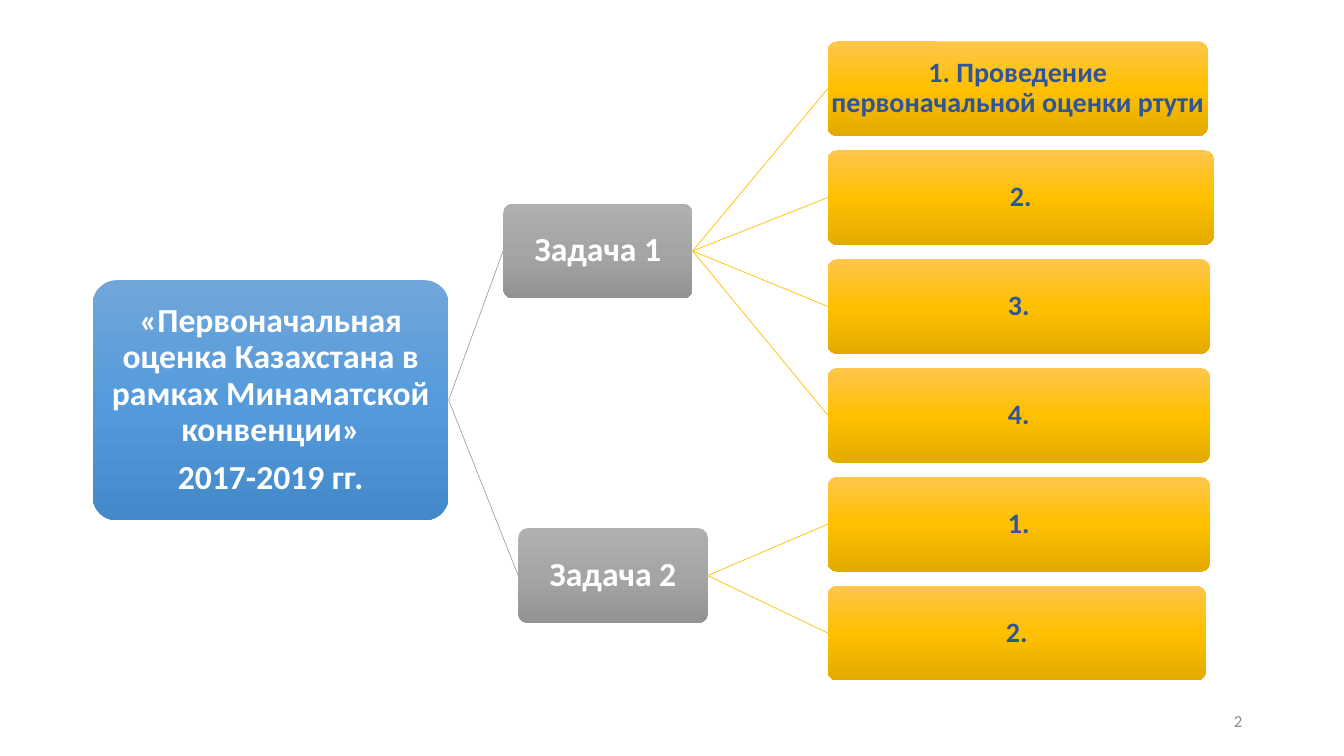
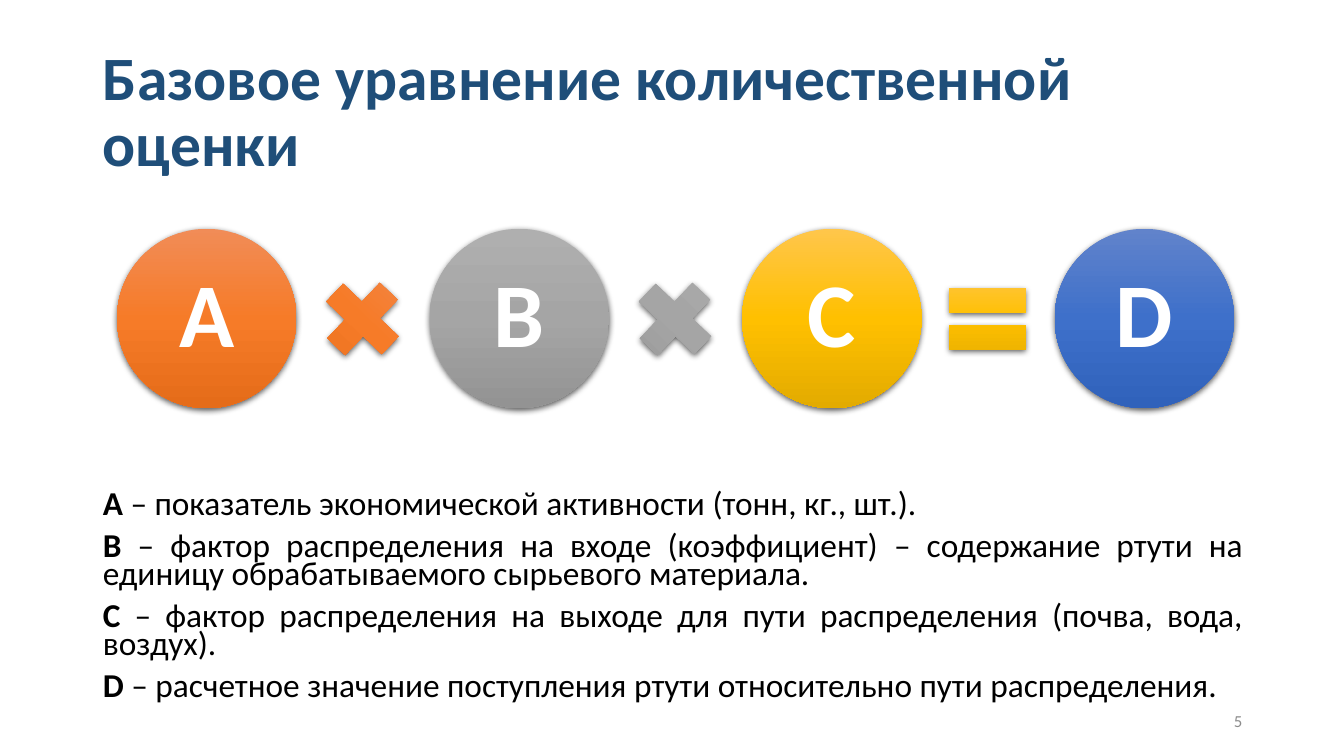
from copy import deepcopy

from lxml.etree import SubElement
from pptx import Presentation
from pptx.dml.color import RGBColor
from pptx.enum.shapes import MSO_CONNECTOR, MSO_SHAPE
from pptx.enum.text import MSO_ANCHOR, MSO_AUTO_SIZE, PP_ALIGN
from pptx.oxml.ns import qn
from pptx.util import Inches, Pt

FONT = "Calibri"
WHITE, BLACK, NAVY, INDIGO, MUTED = "FFFFFF", "000000", "1F4E79", "2F5597", "8C8C8C"
GRAY, GOLD = "A5A5A5", "FFC000"
FILLS = {
    "sky": ("71A6DB", "559BDB", "448ACA"),
    "gray": ("AFAFAF", GRAY, "939393"),
    "gold": ("FFC64B", GOLD, "E3AB00"),
    "orange": ("F18C57", "F67B28", "E56C19"),
    "blue": ("6183CB", "3E70CA", "3062BB"),
}
MIDDLE = {"vertical_anchor": MSO_ANCHOR.MIDDLE}


def tint(code):
    return RGBColor.from_string(code)


def put(item, values):
    for name, value in values.items():
        setattr(item, name, value)


def inset(size):
    sides = ("left", "top", "right", "bottom")
    return {f"margin_{side}": Inches(size) for side in sides}


class Deck:
    def __init__(self):
        self.prs = Presentation()
        put(self.prs, {"slide_width": Inches(13.33), "slide_height": Inches(7.5)})
        self.slide = None

    def add(self, layout, number):
        self.slide = self.prs.slides.add_slide(self.prs.slide_layouts[layout])
        box = self.slide.shapes.add_textbox(*map(Inches, (9.42, 6.95, 3, 0.4)))
        self.text(box.text_frame, [[(number, False)]], 12, MUTED,
                  {"alignment": PP_ALIGN.RIGHT}, MIDDLE)

    def text(self, frame, paras, size, color, style, layout):
        """Fill a frame; each paragraph is a list of (text, bold) runs."""
        put(frame, {"word_wrap": True, "auto_size": MSO_AUTO_SIZE.NONE, **layout})
        for i, runs in enumerate(paras):
            para = frame.add_paragraph() if i else frame.paragraphs[0]
            put(para, style)
            for words, bold in runs:
                run = para.add_run()
                run.text = words
                put(run.font, {"name": FONT, "size": Pt(size), "bold": bold})
                run.font.color.rgb = tint(color)

    def title(self, text, place):
        holder = self.slide.shapes.title
        self.place(holder, place)
        style = {"alignment": PP_ALIGN.LEFT, "line_spacing": 0.9}
        self.text(holder.text_frame, [[(text, True)]], 44, NAVY, style, MIDDLE)

    def body(self, paras, place):
        holder = self.slide.placeholders[1]
        self.place(holder, place)
        style = {"alignment": PP_ALIGN.JUSTIFY, "line_spacing": 0.7,
                 "space_before": Pt(10)}
        frame = holder.text_frame
        self.text(frame, paras, 23.8, BLACK, style,
                  {"vertical_anchor": MSO_ANCHOR.TOP})
        for para in frame.paragraphs:
            props = para._p.get_or_add_pPr()
            props.set("marL", "0")
            props.set("indent", "0")
            SubElement(props, qn("a:buNone"))

    def place(self, holder, place):
        put(holder, dict(zip(("left", "top", "width", "height"), map(Inches, place))))

    def shape(self, kind, place, fill, shade=False):
        shape = self.slide.shapes.add_shape(kind, *map(Inches, place))
        self.blend(shape, FILLS[fill])
        shape.line.fill.background()
        shape.shadow.inherit = False
        if shade:
            self.shade(shape)
        return shape

    def blend(self, shape, colors):
        """Apply a three-stop gradient that runs downwards."""
        fill = shape.fill
        fill.gradient()
        fill.gradient_angle = 270
        stops = shape._element.spPr.find(".//" + qn("a:gsLst"))
        stops.insert(1, deepcopy(stops[0]))
        for stop, spot, color in zip(fill.gradient_stops, (0, 0.5, 1), colors):
            stop.position = spot
            stop.color.rgb = tint(color)

    def shade(self, shape):
        effects = shape._element.spPr.find(qn("a:effectLst"))
        outer = SubElement(effects, qn("a:outerShdw"), blurRad=str(Pt(4.5)),
                           dist=str(Pt(1.5)), dir="5400000", algn="ctr",
                           rotWithShape="0")
        color = SubElement(outer, qn("a:srgbClr"), val=BLACK)
        SubElement(color, qn("a:alpha"), val="63000")

    def label(self, shape, lines, size, color, gap):
        style = {"alignment": PP_ALIGN.CENTER, "line_spacing": 0.9,
                 "space_after": Pt(0.35 * size)}
        self.text(shape.text_frame, [[(line, True)] for line in lines], size,
                  color, style, {**MIDDLE, **inset(gap)})

    def card(self, lines, place, fill, size=24, color=WHITE, gap=0.02):
        card = self.shape(MSO_SHAPE.ROUNDED_RECTANGLE, place, fill)
        card.adjustments[0] = 0.1
        self.label(card, lines, size, color, gap)
        return card

    def link(self, start, end, color):
        """Join the right side of one card to the left side of another."""
        line = self.slide.shapes.add_connector(MSO_CONNECTOR.STRAIGHT, 0, 0, 0, 0)
        line.begin_connect(start, 3)
        line.end_connect(end, 1)
        line.line.color.rgb = tint(color)
        line.line.width = Pt(0.5)
        SubElement(line._element.spPr, qn("a:effectLst"))


def tasks(deck):
    deck.add(6, "2")
    root = deck.card(
        ["«Первоначальная оценка Казахстана в рамках Минаматской конвенции»",
         "2017-2019 гг."], (0.92, 2.78, 3.53, 2.38), "sky")
    tree = [
        ("Задача 1", 4.99, 2.02, [
            ("1. Проведение первоначальной оценки ртути", 3.77),
            ("2.", 3.83), ("3.", 3.79), ("4.", 3.79)]),
        ("Задача 2", 5.14, 5.24, [("1.", 3.79), ("2.", 3.75)]),
    ]
    row = 0
    for name, left, top, steps in tree:
        task = deck.card([name], (left, top, 1.88, 0.94), "gray")
        deck.link(root, task, GRAY)
        for text, width in steps:
            place = (8.21, 0.41 + 1.08 * row, width, 0.94)
            step = deck.card([text], place, "gold", 20, INDIGO, 0.01)
            deck.link(task, step, GOLD)
            row += 1


def formula(deck):
    deck.add(1, "5")
    deck.title("Базовое уравнение количественной оценки", (0.92, 0.4, 11.5, 1.45))
    terms = [
        ("A", "orange", "показатель экономической активности (тонн, кг., шт.)."),
        ("B", "gray", "фактор распределения на входе (коэффициент) – содержание "
                      "ртути на единицу обрабатываемого сырьевого материала."),
        ("C", "gold", "фактор распределения на выходе для пути распределения "
                      "(почва, вода, воздух)."),
        ("D", "blue", "расчетное значение поступления ртути относительно пути "
                      "распределения."),
    ]
    deck.body([[(name, True), (f" – {text}", False)] for name, _, text in terms],
              (0.92, 4.84, 11.5, 2.31))
    times, equal = (MSO_SHAPE.MATH_PLUS, 43.4), (MSO_SHAPE.MATH_EQUAL, 0)
    signs = [times, times, equal]
    pitch = 3.1
    for i, (name, fill, _) in enumerate(terms):
        disc = deck.shape(MSO_SHAPE.OVAL, (1.16 + pitch * i, 2.27, 1.78, 1.78),
                          fill, True)
        deck.label(disc, [name], 65, WHITE, 0.09)
        if i < len(signs):
            kind, turn = signs[i]
            sign = deck.shape(kind, (3.08 + pitch * i, 2.65, 1.03, 1.03), fill, True)
            sign.rotation = turn


def main():
    deck = Deck()
    tasks(deck)
    formula(deck)
    deck.prs.save("out.pptx")


if __name__ == "__main__":
    main()
